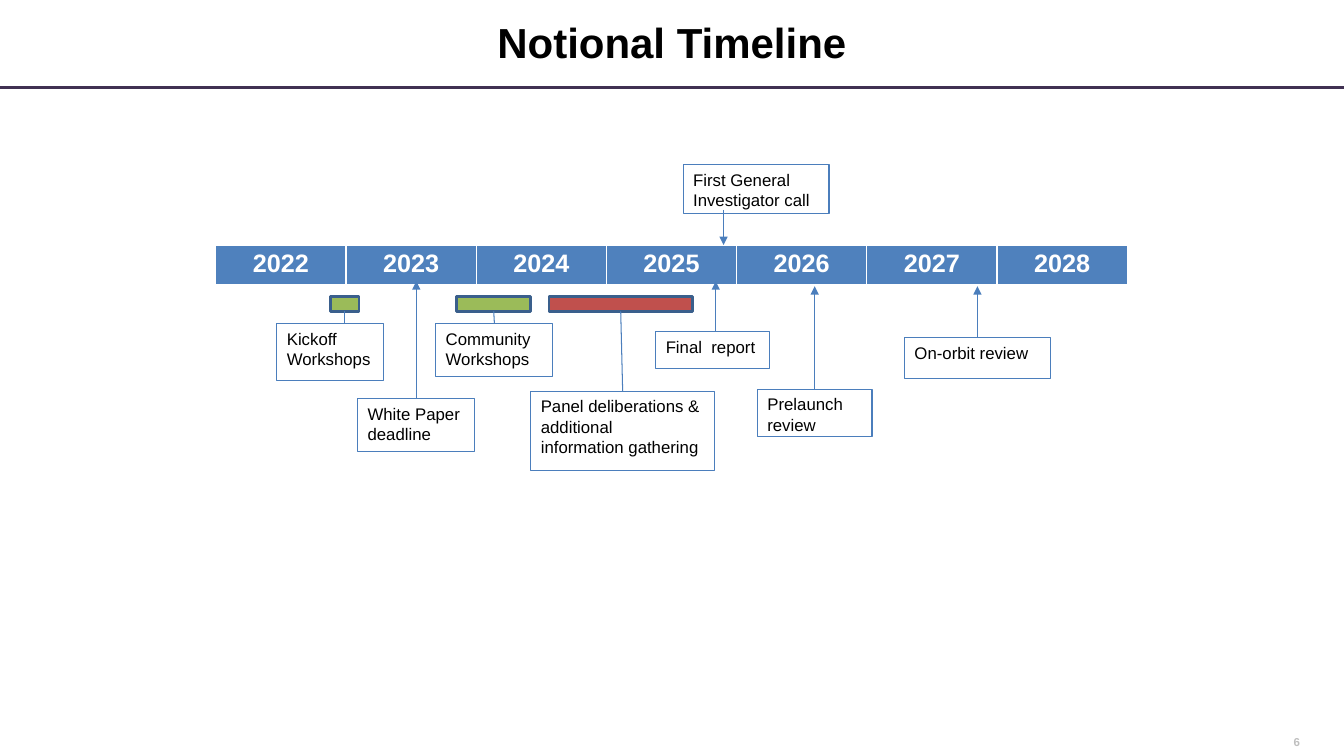
import pptx
import pptx.util
import pptx.dml.color
import pptx.enum.shapes
import pptx.enum.text
import pptx.oxml
import pptx.oxml.ns
import lxml.etree

Inches = pptx.util.Inches
Pt = pptx.util.Pt
RGB = pptx.dml.color.RGBColor.from_string
ALIGN = pptx.enum.text.PP_ALIGN
ANCHOR = pptx.enum.text.MSO_ANCHOR
RECT = pptx.enum.shapes.MSO_SHAPE.RECTANGLE
STRAIGHT = pptx.enum.shapes.MSO_CONNECTOR.STRAIGHT
qn = pptx.oxml.ns.qn

THEME = {
    "font": "Arial", "ink": "000000", "white": "FFFFFF", "rule": "403152",
    "year": "4F81BD", "line": "4B7EBC", "edge": "3A5F8C",
    "workshop": "9BBB59", "panel": "C0504D", "page": "BFBFBF",
    "title_pt": 30, "year_pt": 18, "label_pt": 12, "page_pt": 8.2,
}

prs = pptx.Presentation()
prs.slide_width = W = Inches(13.33)
prs.slide_height = H = Inches(7.5)
s = prs.slides.add_slide(prs.slide_layouts[6])

YEARS = range(2022, 2029)
LEFT, TOP = Inches(2.14), Inches(2.43)
COL, ROW = Inches(9.04) / len(YEARS), Inches(0.41)


def write(tf, text, size, color="ink", bold=False, align=ALIGN.LEFT, anchor=ANCHOR.TOP):
    tf.word_wrap = True
    tf.vertical_anchor = anchor
    p = tf.paragraphs[0]
    p.alignment = align
    r = p.add_run()
    r.text = text
    r.font.name = THEME["font"]
    r.font.size = Pt(THEME[size])
    r.font.bold = bold
    r.font.color.rgb = RGB(THEME[color])


def connect(x1, y1, x2, y2, color="line", width=0.75, arrow=False):
    c = s.shapes.add_connector(STRAIGHT, int(x1), int(y1), int(x2), int(y2))
    c.line.color.rgb = RGB(THEME[color])
    c.line.width = Pt(width)
    if arrow:
        lxml.etree.SubElement(c.line._get_or_add_ln(), qn("a:tailEnd"), type="triangle")
    lxml.etree.SubElement(c._element.spPr, qn("a:effectLst"))
    return c


connect(0, H * 0.116, W, H * 0.116, color="rule", width=2)

title = s.shapes.add_textbox(int(W * 0.108), int(H * 0.01), int(W * 0.784), int(H * 0.09))
write(title.text_frame, "Notional Timeline", "title_pt", bold=True,
      align=ALIGN.CENTER, anchor=ANCHOR.MIDDLE)

page = s.shapes.add_textbox(int(W * 0.875), int(H * 0.968), int(W * 0.096), int(H * 0.025))
tf = page.text_frame
tf.margin_left = tf.margin_right = Inches(0.05)
tf.margin_top = tf.margin_bottom = Inches(0.03)
write(tf, "6", "page_pt", color="page", bold=True, align=ALIGN.RIGHT)

table = s.shapes.add_table(1, len(YEARS), LEFT, TOP, int(COL * len(YEARS)), ROW).table
table.first_row = table.horz_banding = False
for i, year in enumerate(YEARS):
    table.columns[i].width = int(COL)
    cell = table.cell(0, i)
    tcPr = cell._tc.get_or_add_tcPr()
    for side, width in (("L", 1), ("R", 1), ("T", 1), ("B", 3)):
        ln = lxml.etree.SubElement(tcPr, qn(f"a:ln{side}"), w=str(Pt(width)))
        fill = lxml.etree.SubElement(ln, qn("a:solidFill"))
        lxml.etree.SubElement(fill, qn("a:srgbClr"), val=THEME["white"])
    cell.fill.solid()
    cell.fill.fore_color.rgb = RGB(THEME["year"])
    write(cell.text_frame, str(year), "year_pt", color="white", bold=True, align=ALIGN.CENTER)

bars = {}
for name, col, cols, color in (
    ("kickoff", 0.88, 0.22, "workshop"),
    ("community", 1.85, 0.57, "workshop"),
    ("panel", 2.56, 1.10, "panel"),
):
    sp = s.shapes.add_shape(RECT, int(LEFT + col * COL), int(TOP + 1.24 * ROW),
                            int(cols * COL), int(0.37 * ROW))
    sp.shadow.inherit = False
    sp.fill.solid()
    sp.fill.fore_color.rgb = RGB(THEME[color])
    sp.line.color.rgb = RGB(THEME["edge"])
    sp.line.width = Pt(2)
    bars[name] = sp

labels = {}
for name, text, col, row, cols, rows in (
    ("kickoff", "Kickoff Workshops", 0.47, 1.90, 0.82, 1.39),
    ("paper", "White Paper deadline", 1.09, 3.71, 0.90, 1.29),
    ("community", "Community Workshops", 1.69, 1.90, 0.90, 1.29),
    ("panel", "Panel deliberations & additional  information gathering", 2.42, 3.54, 1.41, 1.93),
    ("report", "Final  report", 3.38, 2.10, 0.87, 0.90),
    ("prelaunch", "Prelaunch review", 4.16, 3.49, 0.88, 1.15),
    ("orbit", "On-orbit review", 5.29, 2.24, 1.12, 1.00),
    ("call", "First General Investigator call", 3.59, -1.95, 1.12, 1.20),
):
    sp = s.shapes.add_shape(RECT, int(LEFT + col * COL), int(TOP + row * ROW),
                            int(cols * COL), int(rows * ROW))
    sp.shadow.inherit = False
    sp.fill.background()
    sp.line.color.rgb = RGB(THEME["line"])
    sp.line.width = Pt(0.75)
    write(sp.text_frame, text, "label_pt")
    labels[name] = sp

for name, bar in bars.items():
    label = labels[name]
    x = bar.left + bar.width / 2
    c = connect(x, bar.top + bar.height, x, label.top)
    c.begin_connect(bar, 2)
    if name != "kickoff":
        c.end_connect(label, 0)

for name, row in (("paper", 0.88), ("prelaunch", 1), ("orbit", 1)):
    label = labels[name]
    x = label.left + label.width / 2
    c = connect(x, label.top, x, TOP + row * ROW, arrow=True)
    c.begin_connect(label, 0)

for col, start, end in ((3.84, 2.10, 0.88), (3.90, -0.85, 0)):
    x = LEFT + col * COL
    connect(x, TOP + start * ROW, x, TOP + end * ROW, arrow=True)

prs.save("out.pptx")
